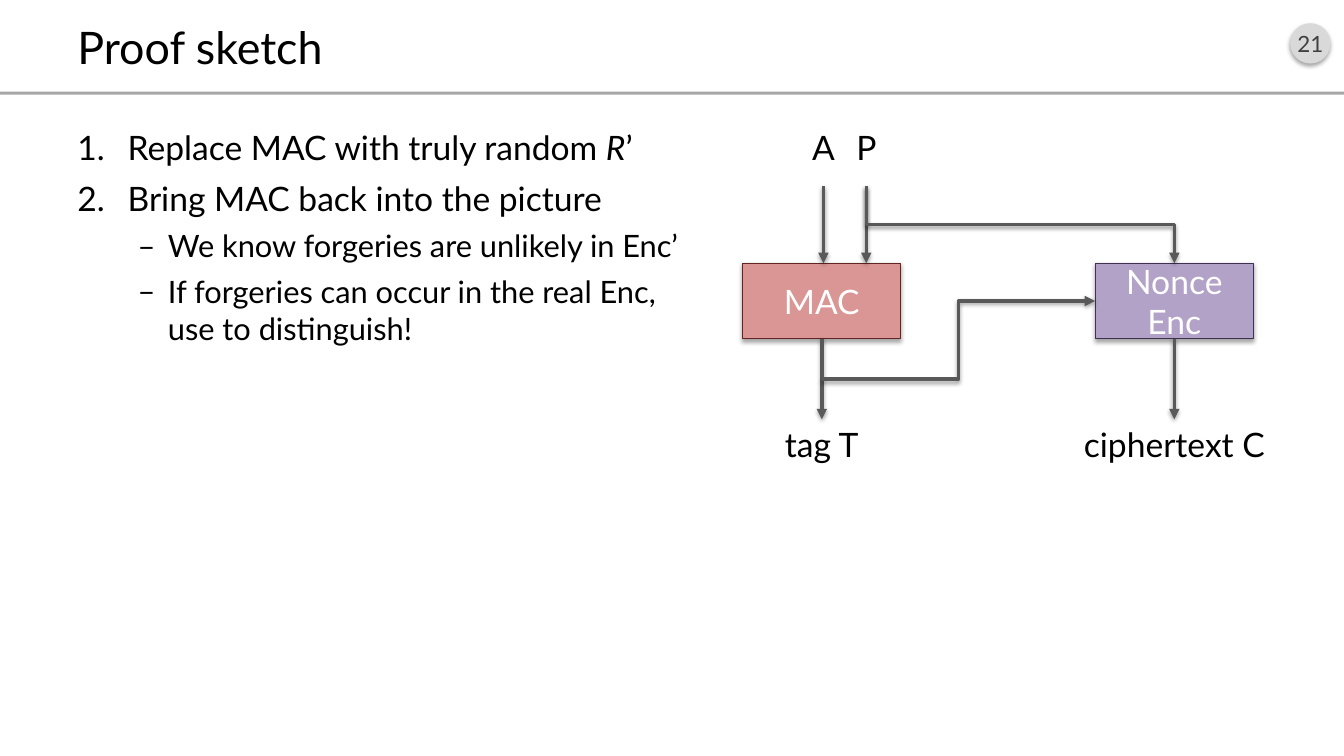
"""Build the proof sketch slide with its MAC and nonce encryption diagram."""
import dataclasses

import lxml.etree
import pptx
import pptx.dml.color
import pptx.enum.shapes
import pptx.enum.text
import pptx.oxml.ns
import pptx.util

Pt = pptx.util.Pt
qn = pptx.oxml.ns.qn
SHAPE = pptx.enum.shapes.MSO_SHAPE
LINK = pptx.enum.shapes.MSO_CONNECTOR
ALIGN = pptx.enum.text.PP_ALIGN
MIDDLE = pptx.enum.text.MSO_ANCHOR.MIDDLE
FIT = pptx.enum.text.MSO_AUTO_SIZE


@dataclasses.dataclass(frozen=True)
class Theme:
    """Colours, font and type sizes."""
    font: str = "Lato"
    ink: str = "000000"
    white: str = "FFFFFF"
    rule: str = "A6A6A6"
    badge: str = "D9D9D9"
    digit: str = "404040"
    wire: str = "595959"
    rose: str = "D99694"
    wine: str = "632523"
    lilac: str = "B3A2C7"
    plum: str = "403152"
    head: int = 32
    main: int = 24
    sub: int = 22
    small: int = 16


T = Theme()
TITLE = "Proof sketch"
PAGE = "21"
STEPS = [
    (0, [("Replace MAC with truly random ", False), ("R", True), ("’", False)]),
    (0, [("Bring MAC back into the picture", False)]),
    (1, [("We know forgeries are unlikely in Enc’", False)]),
    (1, [("If forgeries can occur in the real Enc, use to distinguish!", False)]),
]
LEVELS = [
    dict(size=T.main, gap=8, left=36, hang=36, tag="a:buAutoNum", mark=("type", "arabicPeriod")),
    dict(size=T.sub, gap=6, left=64.8, hang=21.6, tag="a:buChar", mark=("char", "–")),
]
MAC, ENC, A, P = 587, 838.8, 588.2, 618.8
WIDE, HIGH = 113, 54
TOP, ROW, GAP = 87, 188, 57.5
FOOT = ROW + HIGH
START, END = ROW - 55, FOOT + GAP
BOXES = [("MAC", MAC, T.rose, T.wine), ("Nonce Enc", ENC, T.lilac, T.plum)]
LABELS = [
    ("A", A, TOP, 40, 46), ("P", P, TOP, 38, 46),
    ("tag T", MAC, END, 88.5, 46), ("ciphertext C", ENC, END, 145.5, 36),
]
ARROWS = [(A, START, ROW), (P, START, ROW), (MAC, FOOT, END), (ENC, FOOT, END)]


def paint(code):
    return pptx.dml.color.RGBColor.from_string(code)


def write(para, text, size, color=T.ink, slant=None):
    run = para.add_run()
    run.text = text
    font = run.font
    font.name, font.size, font.italic = T.font, Pt(size), slant
    font.color.rgb = paint(color)


def place(item, left, top, wide, high):
    item.left, item.top, item.width, item.height = map(Pt, (left, top, wide, high))


def shade(item, alpha, drop):
    props = item._element.spPr
    list_ = props.find(qn("a:effectLst"))
    if list_ is None:
        list_ = lxml.etree.SubElement(props, qn("a:effectLst"))
    cast = lxml.etree.SubElement(
        list_, qn("a:outerShdw"), blurRad=str(Pt(3.1)), dist=str(Pt(drop)),
        dir="5400000", rotWithShape="0")
    tint = lxml.etree.SubElement(cast, qn("a:srgbClr"), val=T.ink)
    lxml.etree.SubElement(tint, qn("a:alpha"), val=str(alpha * 1000))


def block(shapes, kind, spot, fill, edge=None):
    item = shapes.add_shape(kind, *map(Pt, spot))
    item.shadow.inherit = False
    item.fill.solid()
    item.fill.fore_color.rgb = paint(fill)
    if edge:
        item.line.color.rgb = paint(edge)
        item.line.width = Pt(0.75)
    else:
        item.line.fill.background()
    return item


def label(item, text, size, color):
    frame = item.text_frame
    frame.vertical_anchor = MIDDLE
    para = frame.paragraphs[0]
    para.alignment = ALIGN.CENTER
    write(para, text, size, color)
    shade(item, 35, 1.8)


def arrow(shapes, kind, *ends):
    link = shapes.add_connector(kind, *map(Pt, ends))
    link.line.color.rgb = paint(T.wire)
    link.line.width = Pt(2.5)
    line = link._element.spPr.find(qn("a:ln"))
    lxml.etree.SubElement(line, qn("a:tailEnd"), type="triangle")
    shade(link, 38, 1.6)
    return link


def drop(shapes, x1, y1, x2, y2):
    midx, midy = (x1 + x2) / 2, (y1 + y2) / 2
    halfx, halfy = (x2 - x1) / 2, (y2 - y1) / 2
    link = arrow(shapes, LINK.ELBOW, midx + halfy, midy - halfx, midx - halfy, midy + halfx)
    link._element.spPr.find(qn("a:xfrm")).set("rot", "16200000")


def fill_text(slide):
    title, body = slide.placeholders
    place(title, 48, 11.5, 864, 43)
    title.text_frame.vertical_anchor = MIDDLE
    title.text_frame.auto_size = FIT.NONE
    para = title.text_frame.paragraphs[0]
    para.alignment = ALIGN.LEFT
    write(para, TITLE, T.head)

    place(body, 48, TOP, 451.5, 414)
    frame = body.text_frame
    frame.auto_size = FIT.NONE
    for spot, (level, runs) in enumerate(STEPS):
        look = LEVELS[level]
        para = frame.add_paragraph() if spot else frame.paragraphs[0]
        para.level = level
        para.space_before = Pt(look["gap"])
        props = para._p.get_or_add_pPr()
        props.set("marL", str(Pt(look["left"])))
        props.set("indent", str(-Pt(look["hang"])))
        lxml.etree.SubElement(props, qn("a:buFont"), typeface=T.font)
        lxml.etree.SubElement(props, qn(look["tag"])).set(*look["mark"])
        for text, slant in runs:
            write(para, text, look["size"], slant=slant)


def draw(shapes):
    badge = block(shapes, SHAPE.OVAL, (921.6, 16.6, 28.8, 28.8), T.badge)
    badge.text_frame.margin_left = badge.text_frame.margin_right = 0
    label(badge, PAGE, T.small, T.digit)
    block(shapes, SHAPE.RECTANGLE, (0, 65.5, 960, 2.2), T.rule)

    for text, mid, fill, edge in BOXES:
        box = block(shapes, SHAPE.RECTANGLE, (mid - WIDE / 2, ROW, WIDE, HIGH), fill, edge)
        label(box, text, T.main, T.white)
    for mid, top, end in ARROWS:
        arrow(shapes, LINK.STRAIGHT, mid, top, mid, end)
    arrow(shapes, LINK.ELBOW, MAC, FOOT + GAP / 2, ENC - WIDE / 2, ROW + HIGH / 2)
    drop(shapes, P, START, ENC, ROW)

    for text, mid, top, wide, high in LABELS:
        note = shapes.add_textbox(*map(Pt, (mid - wide / 2, top, wide, high)))
        note.text_frame.word_wrap = False
        note.text_frame.auto_size = FIT.SHAPE_TO_FIT_TEXT
        para = note.text_frame.paragraphs[0]
        para.alignment = ALIGN.CENTER
        write(para, text, T.main)


def main():
    deck = pptx.Presentation()
    deck.slide_width, deck.slide_height = Pt(960), Pt(540)
    slide = deck.slides.add_slide(deck.slide_layouts[1])
    fill_text(slide)
    draw(slide.shapes)
    deck.save("out.pptx")


if __name__ == "__main__":
    main()
